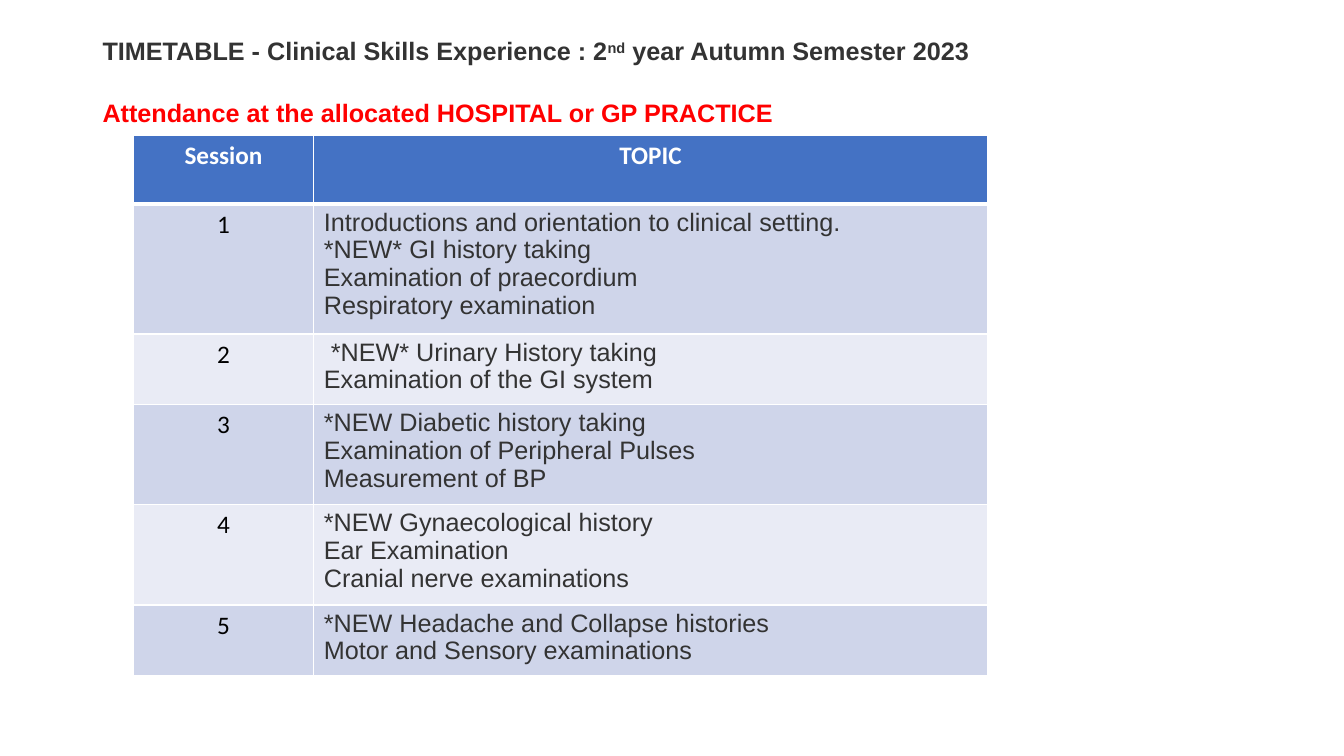
from dataclasses import dataclass

from lxml import etree
from pptx import Presentation
from pptx.dml.color import RGBColor
from pptx.enum.text import MSO_ANCHOR, PP_ALIGN
from pptx.oxml.ns import qn
from pptx.util import Pt

CENTER, LEFT, TOP = PP_ALIGN.CENTER, PP_ALIGN.LEFT, MSO_ANCHOR.TOP


@dataclass(frozen=True)
class Theme:
    heading_font: str = "Calibri"
    body_font: str = "Arial"
    size: int = 18
    ink: str = "333333"
    black: str = "000000"
    white: str = "FFFFFF"
    alert: str = "FF0000"
    header: str = "4472C4"
    bands: tuple = ("CFD5EA", "E9EBF5")


THEME = Theme()

SESSIONS = [
    ["Introductions and orientation to clinical setting.",
     "*NEW* GI history taking",
     "Examination of praecordium",
     "Respiratory examination"],
    [" *NEW* Urinary History taking",
     "Examination of the GI system"],
    ["*NEW Diabetic history taking",
     "Examination of Peripheral Pulses",
     "Measurement of BP"],
    ["*NEW Gynaecological history",
     "Ear Examination",
     "Cranial nerve examinations"],
    ["*NEW Headache and Collapse histories",
     "Motor and Sensory examinations"],
]
HEADER_HEIGHT = 49
COLUMN_WIDTHS = (129, 481)


def row_height(topics):
    return 8 + 21.2 * len(topics)


def add_span(para, text, color, font=THEME.body_font, bold=False):
    span = para.add_run()
    span.text = text
    span.font.name = font
    span.font.size = Pt(THEME.size)
    span.font.bold = bold
    span.font.color.rgb = RGBColor.from_string(color)
    return span


def add_heading(page):
    box = page.shapes.add_textbox(Pt(66.2), Pt(21.8), Pt(828), Pt(72))
    frame = box.text_frame
    frame.word_wrap = True
    frame.vertical_anchor = TOP
    para = frame.paragraphs[0]
    add_span(para, "TIMETABLE - Clinical Skills Experience : 2", THEME.ink, bold=True)
    ordinal = add_span(para, "nd", THEME.ink, bold=True)
    ordinal.font._element.set("baseline", "30000")
    add_span(para, " year Autumn Semester 2023", THEME.ink, bold=True)
    para = frame.add_paragraph()
    para.space_before = Pt(22.9)
    add_span(para, "Attendance at the allocated HOSPITAL or GP PRACTICE", THEME.alert, bold=True)


def set_borders(cell, widths):
    """Draw white borders; widths are points for left, right, top, bottom."""
    properties = cell._tc.get_or_add_tcPr()
    for side, width in zip("LRTB", widths):
        line = etree.SubElement(properties, qn(f"a:ln{side}"), w=str(Pt(width)))
        fill = etree.SubElement(line, qn("a:solidFill"))
        etree.SubElement(fill, qn("a:srgbClr"), val=THEME.white)


def fill_cell(cell, lines, fill, borders, align, **style):
    set_borders(cell, borders)
    cell.fill.solid()
    cell.fill.fore_color.rgb = RGBColor.from_string(fill)
    cell.vertical_anchor = TOP
    frame = cell.text_frame
    for index, line in enumerate(lines):
        para = frame.add_paragraph() if index else frame.paragraphs[0]
        para.alignment = align
        if len(lines) > 1:
            para.line_spacing = 0.98
        add_span(para, line, **style)


def add_timetable(page):
    heights = [HEADER_HEIGHT] + [row_height(topics) for topics in SESSIONS]
    table = page.shapes.add_table(
        len(heights), len(COLUMN_WIDTHS), Pt(95.2), Pt(96.8),
        Pt(sum(COLUMN_WIDTHS)), Pt(sum(heights))).table
    for column, width in zip(table.columns, COLUMN_WIDTHS):
        column.width = Pt(width)
    for row, height in zip(table.rows, heights):
        row.height = Pt(height)

    for column, title in enumerate(("Session", "TOPIC")):
        fill_cell(table.cell(0, column), [title], THEME.header, (1, 1, 1, 3), CENTER,
                  color=THEME.white, font=THEME.heading_font, bold=True)
    for number, topics in enumerate(SESSIONS, start=1):
        band = THEME.bands[(number - 1) % 2]
        borders = (1, 1, 3 if number == 1 else 1, 1)
        fill_cell(table.cell(number, 0), [str(number)], band, borders, CENTER,
                  color=THEME.black, font=THEME.heading_font)
        fill_cell(table.cell(number, 1), topics, band, borders, LEFT, color=THEME.ink)


def main():
    deck = Presentation()
    deck.slide_width, deck.slide_height = Pt(960), Pt(540)
    page = deck.slides.add_slide(deck.slide_layouts[6])
    add_heading(page)
    add_timetable(page)
    deck.save("out.pptx")


if __name__ == "__main__":
    main()
